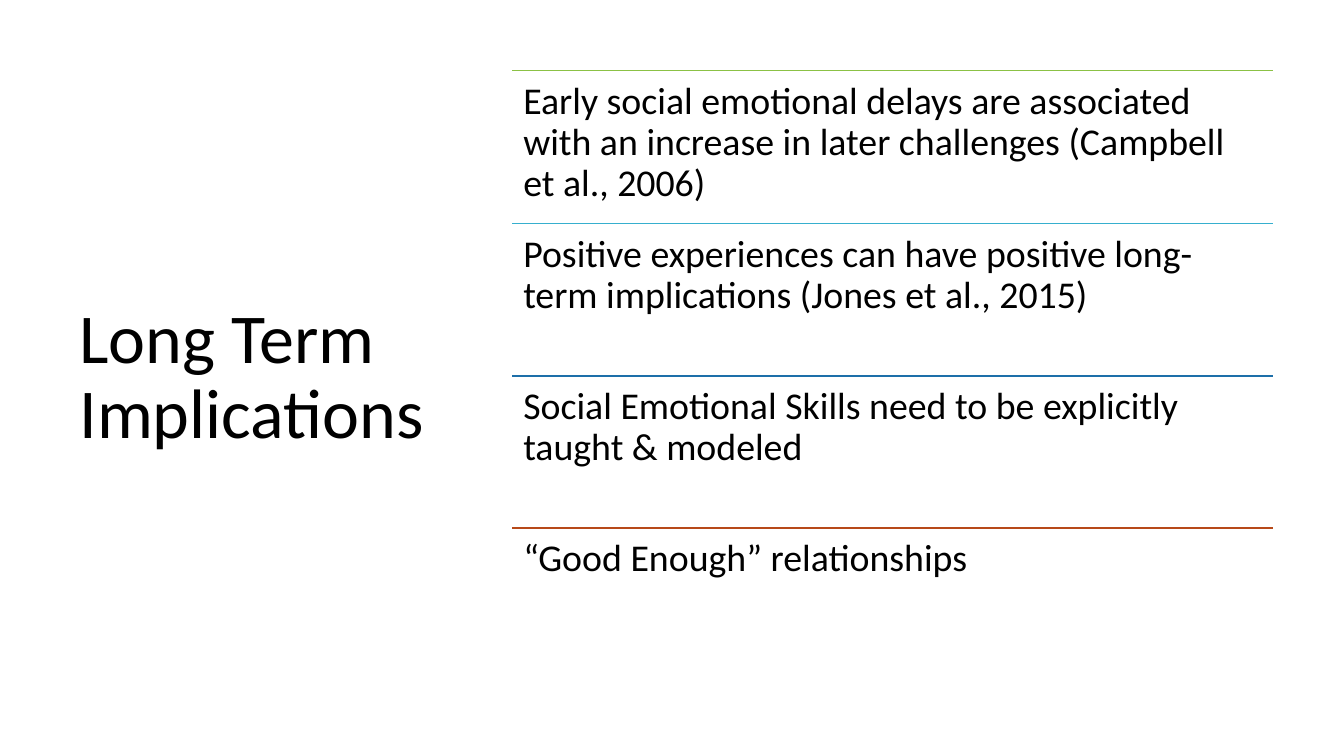
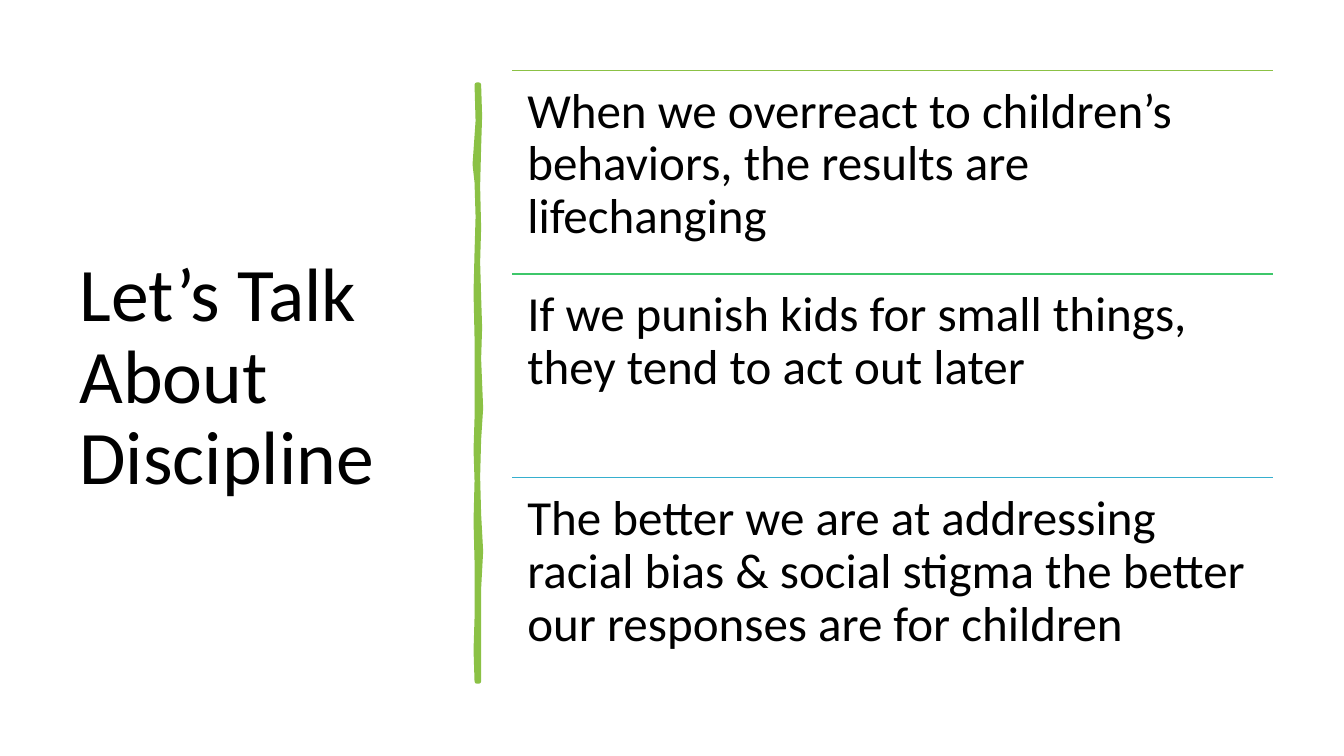
from lxml import etree
from pptx import Presentation
from pptx import util as u
from pptx.dml.color import RGBColor
from pptx.enum import shapes, text
from pptx.oxml import ns

PX = 9144
FONT = "Calibri"
BLACK = RGBColor(0x00, 0x00, 0x00)
LIME = RGBColor(0x8B, 0xC1, 0x45)
GREEN = RGBColor(0x3E, 0xC7, 0x6A)
CYAN = RGBColor(0x36, 0xAF, 0xCE)
BLUE = RGBColor(0x1D, 0x6F, 0xA9)
RUST = RGBColor(0xB7, 0x49, 0x19)

LIST_LEFT, LIST_TOP, LIST_WIDTH, LIST_HEIGHT = 508, 70, 755, 606
BAR_RIGHT = [(475, 84), (476, 115), (475, 146), (474, 185), (475, 226),
             (474, 260), (475, 294), (476, 325), (475, 356), (477, 405),
             (475, 436), (474, 473), (475, 510), (477, 547), (475, 584),
             (475, 630), (475, 676)]
BAR_LEFT = [(473, 676), (472, 645), (473, 613), (473, 557), (472, 517),
            (473, 477), (472, 446), (473, 415), (473, 335), (472, 290),
            (473, 250), (474, 215), (473, 181), (471, 163), (474, 120),
            (473, 84)]


class Deck:
    """Hold the shared style and the current slide."""

    def __init__(self):
        self.prs = Presentation()
        self.prs.slide_width = 1333 * PX
        self.prs.slide_height = 750 * PX
        self.s = None

    def slide(self, title, size):
        self.s = self.prs.slides.add_slide(self.prs.slide_layouts[6])
        self.text(title, 69, 70, 374, 611, size=size, inset=10,
                  anchor=text.MSO_ANCHOR.MIDDLE)

    def text(self, words, x, y, w, h, *, size, inset, color=BLACK,
             anchor=text.MSO_ANCHOR.TOP):
        sp = self.s.shapes.add_textbox(x * PX, y * PX, w * PX, h * PX)
        tf = sp.text_frame
        tf.word_wrap = True
        tf.vertical_anchor = anchor
        tf.margin_left = tf.margin_right = inset * PX
        tf.margin_top = tf.margin_bottom = inset * PX
        p = tf.paragraphs[0]
        p.line_spacing = 0.9
        r = p.add_run()
        r.text = words
        r.font.name = FONT
        r.font.size = u.Pt(size)
        r.font.color.rgb = color

    def rule(self, x, y, w, color):
        line = self.s.shapes.add_connector(
            shapes.MSO_CONNECTOR.STRAIGHT, x * PX, y * PX, (x + w) * PX, y * PX)
        line.line.color.rgb = color
        line.line.width = u.Pt(1)
        etree.SubElement(line._element.spPr, ns.qn("a:effectLst"))

    def ruled_list(self, rows, size, inset):
        for i, (words, color) in enumerate(rows):
            y = LIST_TOP + round(i * LIST_HEIGHT / len(rows))
            self.rule(LIST_LEFT, y, LIST_WIDTH, color)
            self.text(words, LIST_LEFT, y, LIST_WIDTH, LIST_HEIGHT // len(rows),
                      size=size, inset=inset)

    def brush_bar(self, color):
        first, *rest = BAR_RIGHT + BAR_LEFT
        outline = self.s.shapes.build_freeform(*first, scale=PX)
        outline.add_line_segments(rest, close=True)
        sp = outline.convert_to_shape()
        sp.shadow.inherit = False
        sp.fill.solid()
        sp.fill.fore_color.rgb = color
        sp.line.color.rgb = color
        sp.line.width = u.Pt(3.25)
        etree.SubElement(sp._element.spPr.find(ns.qn("a:ln")), ns.qn("a:round"))


def main():
    deck = Deck()

    deck.slide("Long Term Implications", 50)
    deck.ruled_list([
        ("Early social emotional delays are associated with an increase in "
         "later challenges (Campbell et al., 2006)", LIME),
        ("Positive experiences can have positive long-term implications "
         "(Jones et al., 2015)", CYAN),
        ("Social Emotional Skills need to be explicitly taught & modeled", BLUE),
        ("“Good Enough” relationships", RUST),
    ], size=27, inset=11)

    deck.slide("Let’s Talk About Discipline", 54)
    deck.brush_bar(LIME)
    deck.ruled_list([
        ("When we overreact to children’s behaviors, the results are "
         "lifechanging", LIME),
        ("If we punish kids for small things, they tend to act out later", GREEN),
        ("The better we are at addressing racial bias & social stigma the "
         "better our responses are for children", CYAN),
    ], size=35, inset=15)

    deck.prs.save("out.pptx")


if __name__ == "__main__":
    main()
